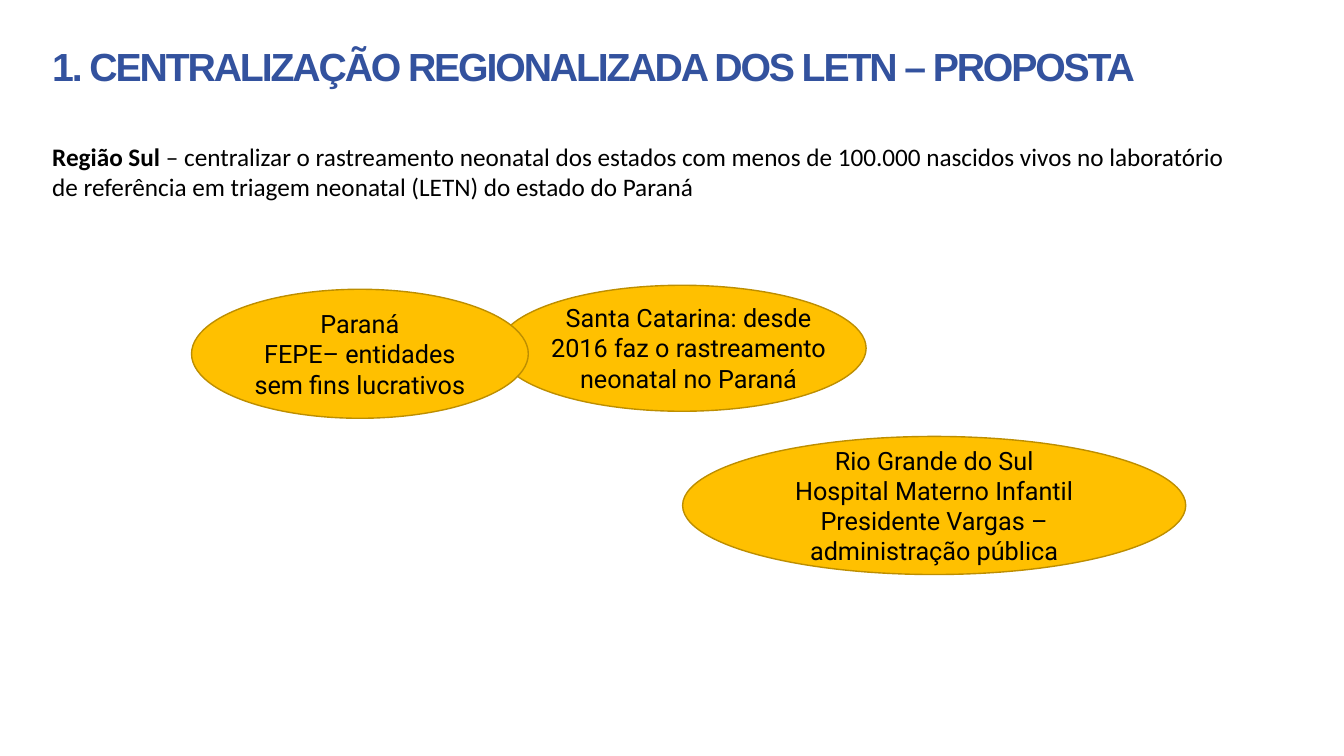
import pptx
import pptx.util
import pptx.dml.color
import pptx.enum.shapes
import pptx.enum.text

Inches = pptx.util.Inches
Pt = pptx.util.Pt
ALIGN = pptx.enum.text.PP_ALIGN
ANCHOR = pptx.enum.text.MSO_ANCHOR
SHAPE = pptx.enum.shapes.MSO_SHAPE

COLORS = {"title": "33529E", "text": "000000", "gold": "FFC000",
          "edge": "BD8E00", "paper": "FFFFFF"}


def color(name):
    return pptx.dml.color.RGBColor.from_string(COLORS[name])


class Deck:
    def __init__(self):
        self.prs = pptx.Presentation()
        self.prs.slide_width = Inches(13.33)
        self.prs.slide_height = Inches(7.5)
        self.slide = self.prs.slides.add_slide(self.prs.slide_layouts[6])

    def style(self, run, face, size=18, tint="text", bold=False):
        run.font.name = face
        run.font.size = Pt(size)
        run.font.bold = bold
        run.font.color.rgb = color(tint)

    def shape(self, kind, box, fill, edge=None):
        shape = self.slide.shapes.add_shape(kind, *map(Inches, box))
        shape.shadow.inherit = False
        shape.fill.solid()
        shape.fill.fore_color.rgb = color(fill)
        if edge:
            shape.line.color.rgb = color(edge)
            shape.line.width = Pt(1)
        else:
            shape.line.fill.background()
        return shape

    def title(self, box, text):
        frame = self.shape(SHAPE.RECTANGLE, box, "paper").text_frame
        frame.word_wrap = True
        frame.vertical_anchor = ANCHOR.TOP
        frame.text = text
        par = frame.paragraphs[0]
        par.alignment = ALIGN.LEFT
        par.line_spacing = 0.9
        self.style(par.runs[0], "Arial", 28, "title", True)
        par.runs[0].font._element.set("spc", "-150")

    def text(self, box):
        frame = self.slide.shapes.add_textbox(*map(Inches, box)).text_frame
        frame.word_wrap = True
        frame.auto_size = pptx.enum.text.MSO_AUTO_SIZE.SHAPE_TO_FIT_TEXT
        return frame

    def lead(self, box, head, body):
        """Add a paragraph that opens with bold words."""
        par = self.text(box).paragraphs[0]
        for words, bold in ((head, True), (body, False)):
            run = par.add_run()
            run.text = words
            self.style(run, "Calibri", bold=bold)

    def center(self, frame, text):
        """Fill a frame with centred paragraphs, one per line of text."""
        frame.text = text
        for par in frame.paragraphs:
            par.alignment = ALIGN.CENTER
            for run in par.runs:
                self.style(run, "Roboto")

    def oval(self, box, text=""):
        frame = self.shape(SHAPE.OVAL, box, "gold", "edge").text_frame
        frame.word_wrap = True
        frame.vertical_anchor = ANCHOR.MIDDLE
        self.center(frame, text)

    def label(self, box, text):
        self.center(self.text(box), text)


def main():
    deck = Deck()
    deck.oval((4.94, 2.83, 3.65, 1.25))
    deck.title((0.42, 0.42, 10.97, 1.08),
               "1. CENTRALIZAÇÃO REGIONALIZADA DOS LETN – PROPOSTA")
    deck.lead((0.42, 1.35, 12.06, 0.71), "Região Sul ",
              "– centralizar o rastreamento neonatal dos estados com menos de "
              "100.000 nascidos vivos no laboratório de referência em triagem "
              "neonatal (LETN) do estado do Paraná")
    deck.oval((6.77, 4.33, 4.99, 1.37),
              "Rio Grande do Sul\nHospital Materno Infantil Presidente "
              "Vargas – administração pública")
    deck.oval((1.9, 2.87, 3.34, 1.28),
              "Paraná\nFEPE– entidades sem fins lucrativos")
    deck.label((5.23, 2.95, 3.2, 1.01),
               "Santa Catarina: desde 2016 faz o rastreamento neonatal no Paraná")
    deck.prs.save("out.pptx")


if __name__ == "__main__":
    main()
